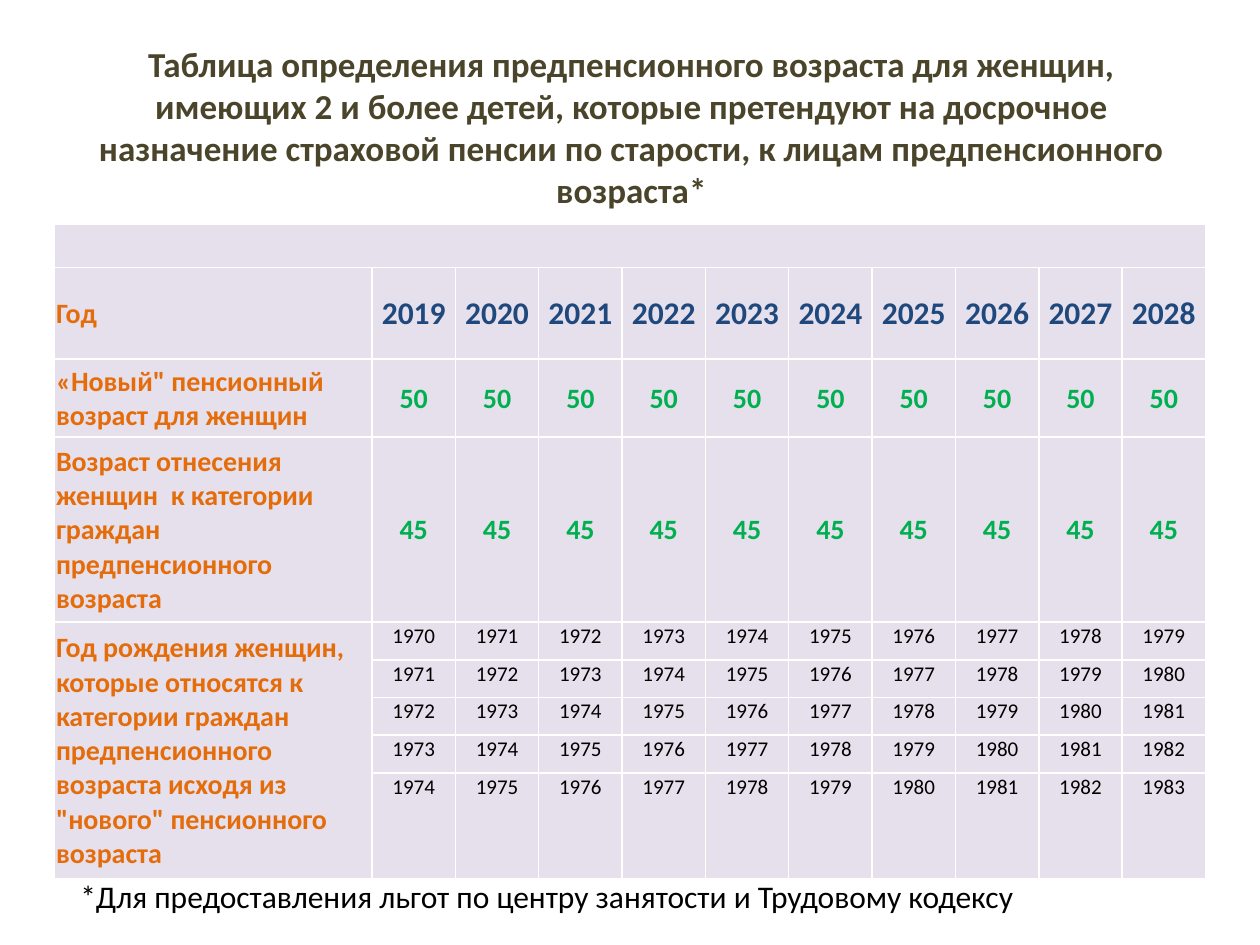
"""Build a slide with a table of pre-retirement ages for women with two or more children."""
from lxml.etree import SubElement
from pptx import Presentation
from pptx.dml.color import RGBColor
from pptx.enum.text import MSO_ANCHOR as Anchor, PP_ALIGN as Align
from pptx.oxml.ns import qn
from pptx.util import Cm, Pt

WHITE = RGBColor(0xFF, 0xFF, 0xFF)
BLACK = RGBColor(0x00, 0x00, 0x00)
LAVENDER = RGBColor(0xE6, 0xE0, 0xEC)
OLIVE = RGBColor(0x4A, 0x45, 0x2A)
ORANGE = RGBColor(0xE4, 0x6C, 0x0A)
NAVY = RGBColor(0x1F, 0x49, 0x7D)
GREEN = RGBColor(0x00, 0xB0, 0x50)

TITLE = {"size": Pt(20), "bold": True, "color": OLIVE}
LABEL = {"size": Pt(16), "bold": True, "color": ORANGE}
YEAR = {"size": Pt(18), "bold": True, "color": NAVY}
AGE = {"size": Pt(16), "bold": True, "color": GREEN}
BIRTH = {"size": Pt(12), "bold": False, "color": BLACK}
NOTE = {"size": Pt(18), "bold": False, "color": BLACK}
CELL_MARGINS = {"margin_left": Cm(0.03), "margin_right": Cm(0.03),
                "margin_top": Cm(0.03), "margin_bottom": Cm(0)}


def write(text_frame, text, style, alignment):
    paragraph = text_frame.paragraphs[0]
    paragraph.alignment = alignment
    run = paragraph.add_run()
    run.text = text
    run.font.name = "Calibri"
    for name, value in style.items():
        if name == "color":
            run.font.color.rgb = value
        else:
            setattr(run.font, name, value)


def format_cell(cell):
    for name, value in CELL_MARGINS.items():
        setattr(cell, name, value)
    properties = cell._tc.get_or_add_tcPr()
    for side in ("a:lnL", "a:lnR", "a:lnT", "a:lnB"):
        line = SubElement(properties, qn(side), w=str(Pt(1)))
        fill = SubElement(line, qn("a:solidFill"))
        SubElement(fill, qn("a:srgbClr"), val=str(WHITE))
    cell.fill.solid()
    cell.fill.fore_color.rgb = LAVENDER


presentation = Presentation()
presentation.slide_width, presentation.slide_height = Cm(25.4), Cm(19.05)
slide = presentation.slides.add_slide(presentation.slide_layouts[6])

title = slide.shapes.add_textbox(Cm(1.3), Cm(1.32), Cm(22.86), Cm(3.18)).text_frame
for name, value in {"word_wrap": True, "vertical_anchor": Anchor.MIDDLE,
                    "margin_bottom": Cm(0.86)}.items():
    setattr(title, name, value)
write(title, "Таблица определения предпенсионного возраста для женщин, имеющих 2 и более детей, "
      "которые претендуют на досрочное назначение страховой пенсии по старости, "
      "к лицам предпенсионного возраста*", TITLE, Align.CENTER)

column_widths = [6.4] + [1.68] * 10
row_heights = [0.86, 1.85, 1.57, 3.73] + [0.76] * 4 + [2.13]
table = slide.shapes.add_table(len(row_heights), len(column_widths), Cm(1.1), Cm(4.53),
                               Cm(sum(column_widths)), Cm(sum(row_heights))).table
table.first_row = table.horz_banding = False
for column, width in zip(table.columns, column_widths):
    column.width = Cm(width)
for row, height in zip(table.rows, row_heights):
    row.height = Cm(height)
for cell in table.iter_cells():
    format_cell(cell)
table.cell(0, 0).merge(table.cell(0, 10))
table.cell(4, 0).merge(table.cell(8, 0))

labels = [
    "Год",
    "«Новый\" пенсионный возраст для женщин",
    "Возраст отнесения женщин  к категории граждан предпенсионного возраста",
    "Год рождения женщин, которые относятся к категории граждан предпенсионного возраста "
    "исходя из \"нового\" пенсионного возраста",
]
for row, label in enumerate(labels, start=1):
    cell = table.cell(row, 0)
    cell.vertical_anchor = Anchor.MIDDLE
    write(cell.text_frame, label, LABEL, Align.LEFT)

for column in range(1, 11):
    for row, value, style in ((1, 2018 + column, YEAR), (2, 50, AGE), (3, 45, AGE)):
        cell = table.cell(row, column)
        cell.vertical_anchor = Anchor.MIDDLE
        write(cell.text_frame, str(value), style, Align.CENTER)
    for offset in range(5):
        birth_year = 1969 + column + offset
        write(table.cell(4 + offset, column).text_frame, str(birth_year), BIRTH, Align.CENTER)

note = slide.shapes.add_textbox(Cm(1.37), Cm(17.55), Cm(22.81), Cm(1.02)).text_frame
note.word_wrap = True
write(note, "*Для предоставления льгот по центру занятости и Трудовому кодексу", NOTE, Align.LEFT)

presentation.save("out.pptx")
